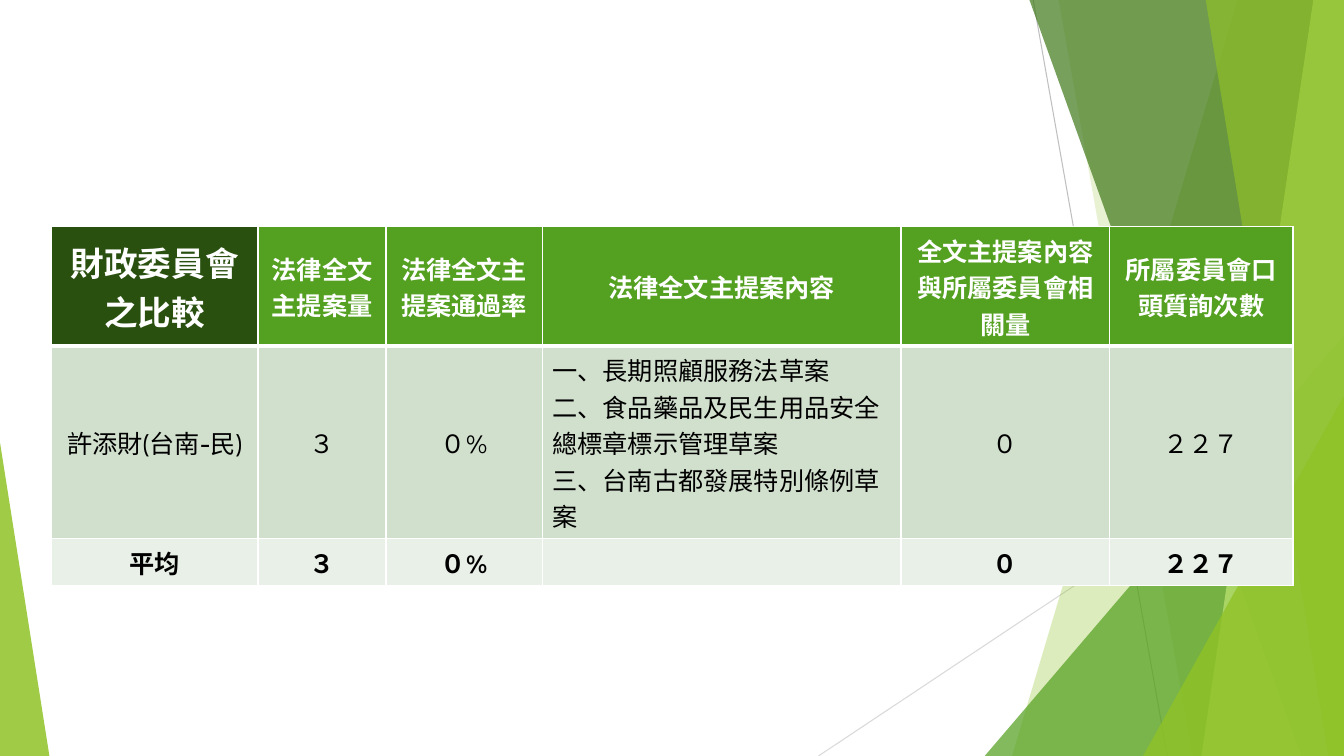
"""Build the finance committee comparison slide."""
from lxml import etree
from pptx import Presentation
from pptx import util as u
from pptx.dml.color import RGBColor
from pptx.enum import shapes as sh, text as tx
from pptx.oxml import ns

WHITE = RGBColor(0xFF, 0xFF, 0xFF)
BLACK = RGBColor(0, 0, 0)
GREY = RGBColor(0xBF, 0xBF, 0xBF)
PALE = RGBColor(0xD9, 0xD9, 0xD9)
LIME = RGBColor(0x90, 0xC2, 0x26)
LEAF = RGBColor(0x54, 0xA0, 0x21)
MOSS = RGBColor(0x3F, 0x78, 0x19)
MINT = RGBColor(0xC0, 0xE4, 0x74)
DARK = RGBColor(0x2A, 0x50, 0x10)
SAGE = RGBColor(0xD1, 0xDF, 0xCD)
MIST = RGBColor(0xE9, 0xF0, 0xE8)

PAGE = (0, 0, 960, 540)
GRID = (36.7, 162, 887, 171.3)
COLS = [147.6, 91.4, 111.6, 256.3, 149, 131]
ROWS = [56.9, 91.4, 23]

RAYS = [((738, 0), (833.8, 540), GREY), ((960, 290.2), (584.6, 540), PALE)]
FACETS = [
    ("wedge", (884.2, 722.9), LIME, 30),
    ("wedge", (756, 851.8), LIME, 20),
    ("peak", (703.4, 239.8, 256.6, 1), LEAF, 72),
    ("wedge", (735.1, 929.5), MOSS, 70),
    ("wedge", (938.2, 858.2), MINT, 70),
    ("wedge", (861.1, 949), LIME, 65),
    ("peak", (816.5, 283, 143.5, 1), LIME, 80),
    ("peak", (0, 316.1, 35.3, 0), LIME, 85),
]

HEAD = ["財政委員會\n之比較", "法律全文主提案量", "法律全文主提案通過率", "法律全文主提案內容",
        "全文主提案內容與所屬委員會相關量", "所屬委員會口頭質詢次數"]
BILLS = "一、長期照顧服務法草案\n二、食品藥品及民生用品安全總標章標示管理草案\n三、台南古都發展特別條例草案"
BODY = ["許添財(台南-民)", "３", "０%", BILLS, "０", "２２７"]
MEAN = ["平均", "３", "０%", "", "０", "２２７"]
LINES = [
    (HEAD, LEAF, {"bold": True}, WHITE),
    (BODY, SAGE, {"bold": False}, BLACK),
    (MEAN, MIST, {"bold": True}, BLACK),
]


def put(obj, vals):
    """Set each attribute named in a dict."""
    for key, val in vals.items():
        setattr(obj, key, val)


def paint(shape, color, alpha):
    """Fill a shape with a see-through colour and no outline."""
    shape.shadow.inherit = False
    shape.fill.solid()
    shape.fill.fore_color.rgb = color
    shape.line.fill.background()
    tone = shape.fill._xPr.find(".//" + ns.qn("a:srgbClr"))
    etree.SubElement(tone, ns.qn("a:alpha"), val=str(alpha * 1000))


def wedge(slide, box, ends):
    """Draw a panel with a slanted left edge reaching the right of the box."""
    x, y, w, h = box
    top, low = ends
    pts = [(x + top, y - 0.7), (x + w, y - 0.7), (x + w, y + h), (x + low, y + h)]
    pts = [(u.Pt(a), u.Pt(b)) for a, b in pts]
    form = slide.shapes.build_freeform(*pts[0])
    form.add_line_segments(pts[1:], close=True)
    return form.convert_to_shape()


def peak(slide, box, spot):
    """Draw a right triangle standing on the bottom of the box."""
    x, y, w, h = box
    left, top, wide, tip = spot
    area = [u.Pt(v) for v in (x + left, y + top, wide, h - top)]
    shape = slide.shapes.add_shape(sh.MSO_SHAPE.ISOSCELES_TRIANGLE, *area)
    shape.adjustments[0] = tip
    return shape


def decor(slide, box):
    """Draw the thin rays and the green facets."""
    x, y = box[:2]
    for (ax, ay), (bx, by), color in RAYS:
        ends = [u.Pt(v) for v in (x + ax, y + ay, x + bx, y + by)]
        ray = slide.shapes.add_connector(sh.MSO_CONNECTOR.STRAIGHT, *ends)
        put(ray.line, {"width": u.Pt(0.75)})
        ray.line.color.rgb = color
        etree.SubElement(ray._element.spPr, ns.qn("a:effectLst"))
    draw = {"wedge": wedge, "peak": peak}
    for kind, spot, color, alpha in FACETS:
        paint(draw[kind](slide, box, spot), color, alpha)


def edge(cell, sides):
    """Give a cell white borders of the given widths."""
    props = cell._tc.get_or_add_tcPr()
    for side, wide in sides.items():
        line = etree.SubElement(props, ns.qn("a:ln" + side), w=str(u.Pt(wide)))
        fill = etree.SubElement(line, ns.qn("a:solidFill"))
        etree.SubElement(fill, ns.qn("a:srgbClr"), val=str(WHITE))


def write(cell, words, form, ink, align):
    """Write a cell's paragraphs in one format."""
    cell.text_frame.text = words
    for para in cell.text_frame.paragraphs:
        para.alignment = align
        for run in para.runs:
            put(run.font, form)
            run.font.color.rgb = ink


def table(slide, box):
    """Draw the comparison table."""
    area = [u.Pt(v) for v in box]
    grid = slide.shapes.add_table(len(ROWS), len(COLS), *area).table
    for col, wide in zip(grid.columns, COLS):
        col.width = u.Pt(wide)
    for row, tall in zip(grid.rows, ROWS):
        row.height = u.Pt(tall)
    for r, (texts, back, form, ink) in enumerate(LINES):
        for c, words in enumerate(texts):
            cell = grid.cell(r, c)
            first = r == c == 0
            edge(cell, {"L": 1, "R": 1, "T": 3 if r == 1 else 1, "B": 1 if r else 3})
            cell.fill.solid()
            cell.fill.fore_color.rgb = DARK if first else back
            cell.vertical_anchor = tx.MSO_ANCHOR.MIDDLE
            align = tx.PP_ALIGN.LEFT if words == BILLS else tx.PP_ALIGN.CENTER
            size = u.Pt(24 if first else 18)
            write(cell, words, {"name": "Cabin", "size": size, **form}, ink, align)


def main():
    """Build and save the slide."""
    deck = Presentation()
    put(deck, {"slide_width": u.Pt(PAGE[2]), "slide_height": u.Pt(PAGE[3])})
    slide = deck.slides.add_slide(deck.slide_layouts[6])
    decor(slide, PAGE)
    table(slide, GRID)
    deck.save("out.pptx")


if __name__ == "__main__":
    main()
